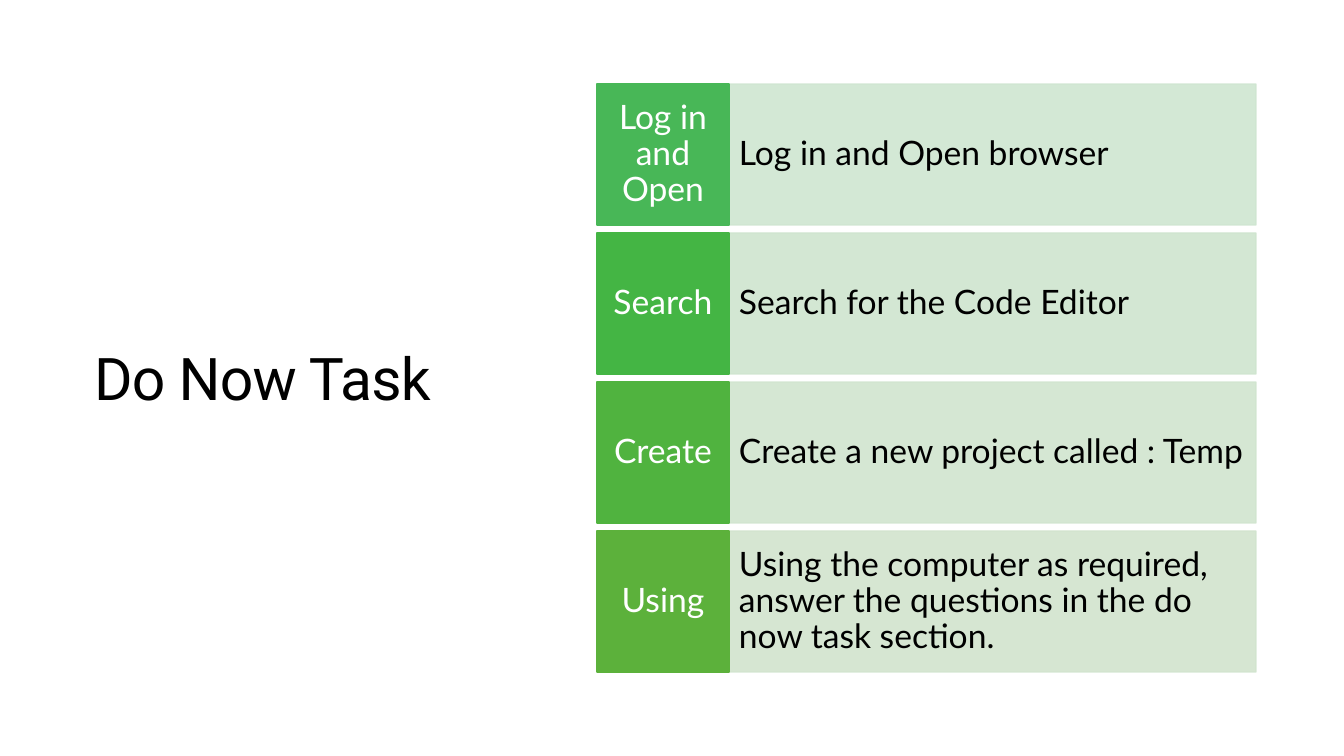
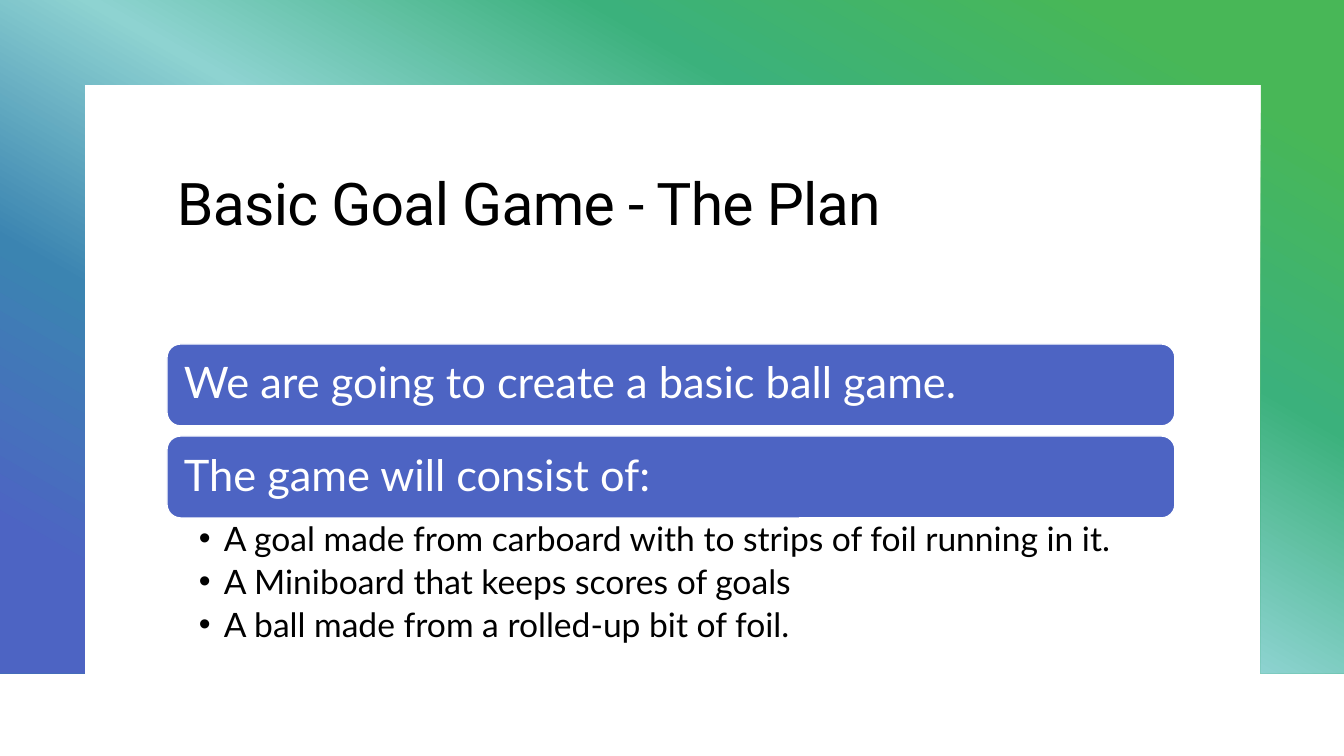
from lxml import etree
from pptx import Presentation
from pptx.dml.color import RGBColor
from pptx.enum.shapes import MSO_SHAPE
from pptx.enum.text import MSO_ANCHOR, MSO_AUTO_SIZE, PP_ALIGN
from pptx.oxml.ns import qn
from pptx.util import Emu, Pt

RECT, ROUNDED = MSO_SHAPE.RECTANGLE, MSO_SHAPE.ROUNDED_RECTANGLE
TOP, MIDDLE = MSO_ANCHOR.TOP, MSO_ANCHOR.MIDDLE
LEFT, CENTER = PP_ALIGN.LEFT, PP_ALIGN.CENTER
NO_FIT = MSO_AUTO_SIZE.NONE

SCALE = 914400 / 100.8
WIDTH, HEIGHT = 1344, 756
BLACK, WHITE, BLUE = "000000", "FFFFFF", "4D64C3"
TITLE_FONT, BODY_FONT = "Roboto", "Lato"
GRADIENT = [(10, "48B757"), (30, "3BB17C"), (50, "8ED3D1"),
            (70, "3B84B1"), (90, BLUE)]
LAYOUT_LIST, LAYOUT_TITLE = 1, 5


def px(n):
    return Emu(round(n * SCALE))


def rgb(color):
    return RGBColor.from_string(color)


class Deck:
    """Holds the style and the slide being built."""

    def __init__(self):
        self.prs = Presentation()
        self.prs.slide_width, self.prs.slide_height = px(WIDTH), px(HEIGHT)
        self.slide = None

    def new_slide(self, layout):
        self.slide = self.prs.slides.add_slide(self.prs.slide_layouts[layout])

    def place(self, sp, box):
        sp.left, sp.top, sp.width, sp.height = map(px, box)

    def frame_text(self, sp, anchor, insets):
        """Set wrapping, anchor and the left, top, right, bottom insets."""
        tf = sp.text_frame
        tf.word_wrap, tf.auto_size, tf.vertical_anchor = True, NO_FIT, anchor
        (tf.margin_left, tf.margin_top,
         tf.margin_right, tf.margin_bottom) = map(px, insets)
        return tf

    def add_text(self, p, text, size, color, font=BODY_FONT, align=LEFT,
                 spacing=0.9, after=0):
        p.alignment, p.line_spacing = align, spacing
        p.space_before, p.space_after = Pt(0), Pt(after)
        r = p.add_run()
        r.text = text
        r.font.size, r.font.name = Pt(size), font
        r.font.color.rgb = rgb(color)
        return r

    def title(self, text, box, anchor):
        sp = self.slide.shapes.title
        self.place(sp, box)
        tf = self.frame_text(sp, anchor, (10, 5, 10, 5))
        r = self.add_text(tf.paragraphs[0], text, 42, BLACK, TITLE_FONT,
                          spacing=0.95)
        r._r.get_or_add_rPr().set("spc", "-50")

    def block(self, kind, box, fill, text, size, insets, color=WHITE,
              line=None, align=LEFT, opacity=100):
        sp = self.slide.shapes.add_shape(kind, *map(px, box))
        sp.shadow.inherit = False
        sp.fill.solid()
        sp.fill.fore_color.rgb = rgb(fill)
        sp.line.color.rgb = rgb(line or fill)
        sp.line.width = Pt(1)
        if opacity < 100:
            for clr in sp._element.spPr.iter(qn("a:srgbClr")):
                etree.SubElement(clr, qn("a:alpha"), val=str(opacity * 1000))
        tf = self.frame_text(sp, MIDDLE, insets)
        self.add_text(tf.paragraphs[0], text, size, color, align=align)

    def bullets(self, items, box):
        sp = self.slide.placeholders[1]
        self.place(sp, box)
        tf = self.frame_text(sp, TOP, (32, 4, 24, 4))
        for i, item in enumerate(items):
            p = tf.add_paragraph() if i else tf.paragraphs[0]
            p.level = 1
            pPr = p._p.get_or_add_pPr()
            pPr.set("marL", str(px(25)))
            pPr.set("indent", str(px(-25)))
            etree.SubElement(pPr, qn("a:buFont"), typeface="Arial")
            etree.SubElement(pPr, qn("a:buChar"), char="•")
            self.add_text(p, item, 24, BLACK, after=4.8)

    def gradient_border(self):
        left, right, top, bottom = 85, 1261, 85, 673
        builder = self.slide.shapes.build_freeform(0, 0, scale=SCALE)
        builder.add_line_segments(
            [(WIDTH, 0), (WIDTH, bottom), (right, bottom), (right, top),
             (left, top), (left, bottom), (0, bottom)], close=True)
        sp = builder.convert_to_shape()
        sp.shadow.inherit = False
        sp.line.fill.background()
        sp.fill.gradient()
        sp.fill.gradient_angle = 240
        stops = sp._element.spPr.find(".//" + qn("a:gsLst"))
        for gs in list(stops):
            stops.remove(gs)
        for pos, color in GRADIENT:
            gs = etree.SubElement(stops, qn("a:gs"), pos=str(pos * 1000))
            etree.SubElement(gs, qn("a:srgbClr"), val=color)


def do_now_slide(deck):
    deck.new_slide(LAYOUT_TITLE)
    deck.title("Do Now Task", (84, 86, 430, 589), MIDDLE)
    steps = [
        ("Log in and Open", "Log in and Open browser", "48B757", "CFE6D1"),
        ("Search", "Search for the Code Editor", "44B544", "CFE5CF"),
        ("Create", "Create a new project called : Temp", "50B33F", "D1E5CF"),
        ("Using", "Using the computer as required, answer the questions "
                  "in the do now task section.", "5CB13B", "D2E4CE"),
    ]
    for i, (label, detail, strong, pale) in enumerate(steps):
        y = 84 + 149 * i
        deck.block(RECT, (729, y, 527, 141), pale, detail, 24,
                   (10, 35, 10, 35), color=BLACK, opacity=90)
        deck.block(RECT, (597, y, 132, 141), strong, label, 24,
                   (7, 14, 7, 14), align=CENTER)


def plan_slide(deck):
    deck.new_slide(LAYOUT_LIST)
    deck.gradient_border()
    deck.title("Basic Goal Game - The Plan", (167, 167, 1008, 148), TOP)
    headings = ["We are going to create a basic ball game.",
                "The game will consist of:"]
    for i, heading in enumerate(headings):
        deck.block(ROUNDED, (167, 344 + 92 * i, 1008, 82), BLUE, heading, 31,
                   (13, 13, 13, 13), line=WHITE)
    deck.bullets(
        ["A goal made from carboard with to strips of foil running in it.",
         "A Miniboard that keeps scores of goals",
         "A ball made from a rolled-up bit of foil."],
        (167, 518, 1008, 138))


def main():
    deck = Deck()
    do_now_slide(deck)
    plan_slide(deck)
    deck.prs.save("out.pptx")


if __name__ == "__main__":
    main()
